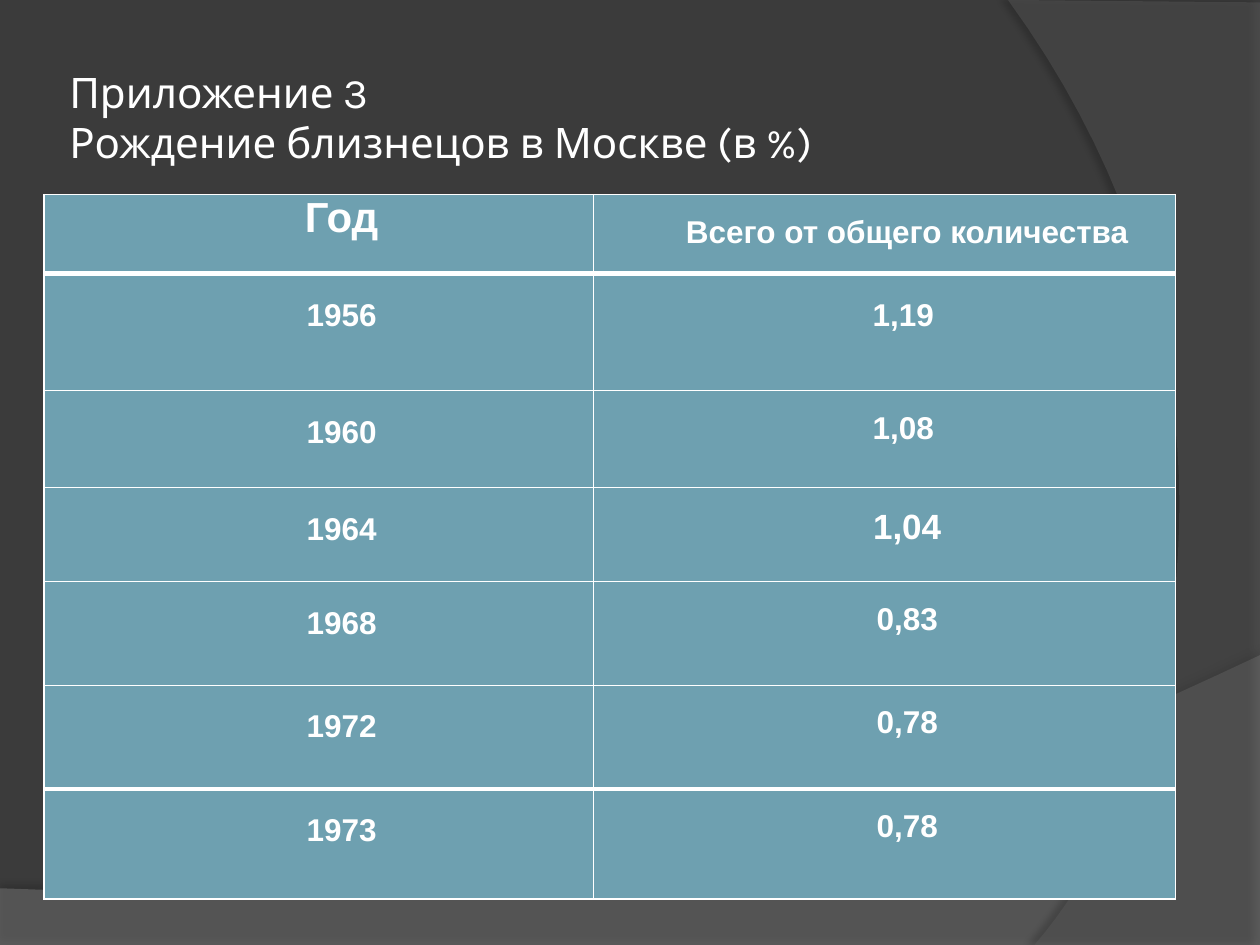
import pptx
import pptx.dml.color
import pptx.enum.text
import pptx.oxml
import pptx.oxml.ns
import pptx.util

Pt = pptx.util.Pt
RGB = pptx.dml.color.RGBColor.from_string
qn = pptx.oxml.ns.qn
NS = pptx.oxml.ns.nsdecls("a")

THEME = {
    "back": "3B3B3B", "wave": "7F7F7F", "arc": "5E5E5E", "shadow": "000000",
    "cell": "6EA0B0", "text": "FFFFFF", "border": "FFFFFF",
    "title_font": "Karla", "table_font": "Arial",
    "title": 24, "year_head": 24, "body": 18, "large": 20,
}


def curve(p0, p1, p2, p3, steps=40):
    """Points along a cubic Bezier curve, without its start."""
    points = []
    for i in range(1, steps + 1):
        t = i / steps
        u = 1 - t
        points.append(tuple(
            u**3 * a + 3 * u * u * t * b + 3 * u * t * t * c + t**3 * d
            for a, b, c, d in zip(p0, p1, p2, p3)))
    return points


def style_run(r, font, size, bold=False):
    values = {"name": font, "size": Pt(size), "bold": bold}
    for name, value in values.items():
        setattr(r.font, name, value)
    r.font.color.rgb = RGB(THEME["text"])


prs = pptx.Presentation()
prs.slide_width, prs.slide_height = Pt(720), Pt(540)
s = prs.slides.add_slide(prs.slide_layouts[6])
s.background.fill.solid()
s.background.fill.fore_color.rgb = RGB(THEME["back"])

# Background waves: points, colour, opacity, shadow opacity, distance, direction
wave = [(0, 507.6), (0, 540), (720, 540), (720, 374.4)]
wave += curve(wave[-1], (402.5, 524.9), (281.5, 517.7), wave[0])
arc = [(720, 1.4), (720, 540), (591.1, 540)]
arc += curve(arc[-1], (673.2, 445.7), (733, 216), (576, 0))
for points, color, alpha, shade, dist, angle in [
    (wave, "wave", 45, 35, 3.5, 270),
    (arc, "arc", 40, 45, 4, 180),
]:
    (x, y), *rest = [(Pt(px), Pt(py)) for px, py in points]
    fb = s.shapes.build_freeform(x, y)
    fb.add_line_segments(rest, close=True)
    sp = fb.convert_to_shape()
    sp.fill.solid()
    sp.fill.fore_color.rgb = RGB(THEME[color])
    sp.line.fill.background()
    sp.shadow.inherit = False
    spPr = sp._element.spPr
    spPr.find(qn("a:solidFill"))[0].append(pptx.oxml.parse_xml(
        f'<a:alpha {NS} val="{alpha * 1000}"/>'))
    spPr.find(qn("a:effectLst")).append(pptx.oxml.parse_xml(
        f'<a:outerShdw {NS} blurRad="{Pt(4)}" dist="{Pt(dist)}" '
        f'dir="{angle * 60000}" algn="ctr" rotWithShape="0">'
        f'<a:srgbClr val="{THEME["shadow"]}"><a:alpha val="{shade * 1000}"/>'
        f'</a:srgbClr></a:outerShdw>'))

# Title
tf = s.shapes.add_textbox(Pt(36), Pt(21.6), Pt(588), Pt(90)).text_frame
frame = {"word_wrap": True, "vertical_anchor": pptx.enum.text.MSO_ANCHOR.MIDDLE}
frame |= {f"margin_{side}": Pt(3.6) for side in ("left", "right", "top", "bottom")}
for name, value in frame.items():
    setattr(tf, name, value)
p = tf.paragraphs[0]
p.text = "Приложение 3\vРождение близнецов в Москве (в %)"
for r in p.runs:
    style_run(r, THEME["title_font"], THEME["title"])

# Table: row height, then text, size, top margin and indent of each cell
ROWS = [
    (45, ("Год", "year_head", 0, 26), ("Всего от общего количества", "body", 11.5, 26)),
    (67, ("1956", "body", 13.8, 26), ("1,19", "body", 13.8, 21.6)),
    (55.4, ("1960", "body", 13.8, 26), ("1,08", "body", 11.5, 21.6)),
    (53.8, ("1964", "body", 13.8, 26), ("1,04", "large", 11.5, 26)),
    (59.3, ("1968", "body", 13.8, 26), ("0,83", "body", 11.5, 26)),
    (59.3, ("1972", "body", 13.8, 26), ("0,78", "body", 11.5, 26)),
    (62.8, ("1973", "body", 13.8, 26), ("0,78", "body", 11.5, 26)),
]
COLS = [314, 332.4]
last = len(ROWS) - 1
height = sum(row[0] for row in ROWS)
table = s.shapes.add_table(len(ROWS), len(COLS), Pt(25.2), Pt(111.2),
                           Pt(sum(COLS)), Pt(height)).table
table.first_row = table.horz_banding = False
for col, width in zip(table.columns, COLS):
    col.width = Pt(width)

for i, (row_height, *cells) in enumerate(ROWS):
    table.rows[i].height = Pt(row_height)
    # Thick rules lie under the heading and above the last row
    widths = {"L": 1, "R": 1, "T": 3 if i in (1, last) else 1,
              "B": 3 if i in (0, last - 1) else 1}
    for j, (text, size, top, indent) in enumerate(cells):
        cell = table.cell(i, j)
        tcPr = cell._tc.get_or_add_tcPr()
        for side, width in widths.items():
            tcPr.append(pptx.oxml.parse_xml(
                f'<a:ln{side} {NS} w="{Pt(width)}"><a:solidFill>'
                f'<a:srgbClr val="{THEME["border"]}"/></a:solidFill></a:ln{side}>'))
        cell.fill.solid()
        cell.fill.fore_color.rgb = RGB(THEME["cell"])
        margins = {"left": 5, "right": 5, "top": top, "bottom": 0}
        for side, value in margins.items():
            setattr(cell, f"margin_{side}", Pt(value))
        p = cell.text_frame.paragraphs[0]
        p.alignment = pptx.enum.text.PP_ALIGN.CENTER
        p._p.get_or_add_pPr().set("indent", str(Pt(indent)))
        r = p.add_run()
        r.text = text
        style_run(r, THEME["table_font"], THEME[size], bold=True)

prs.save("out.pptx")
